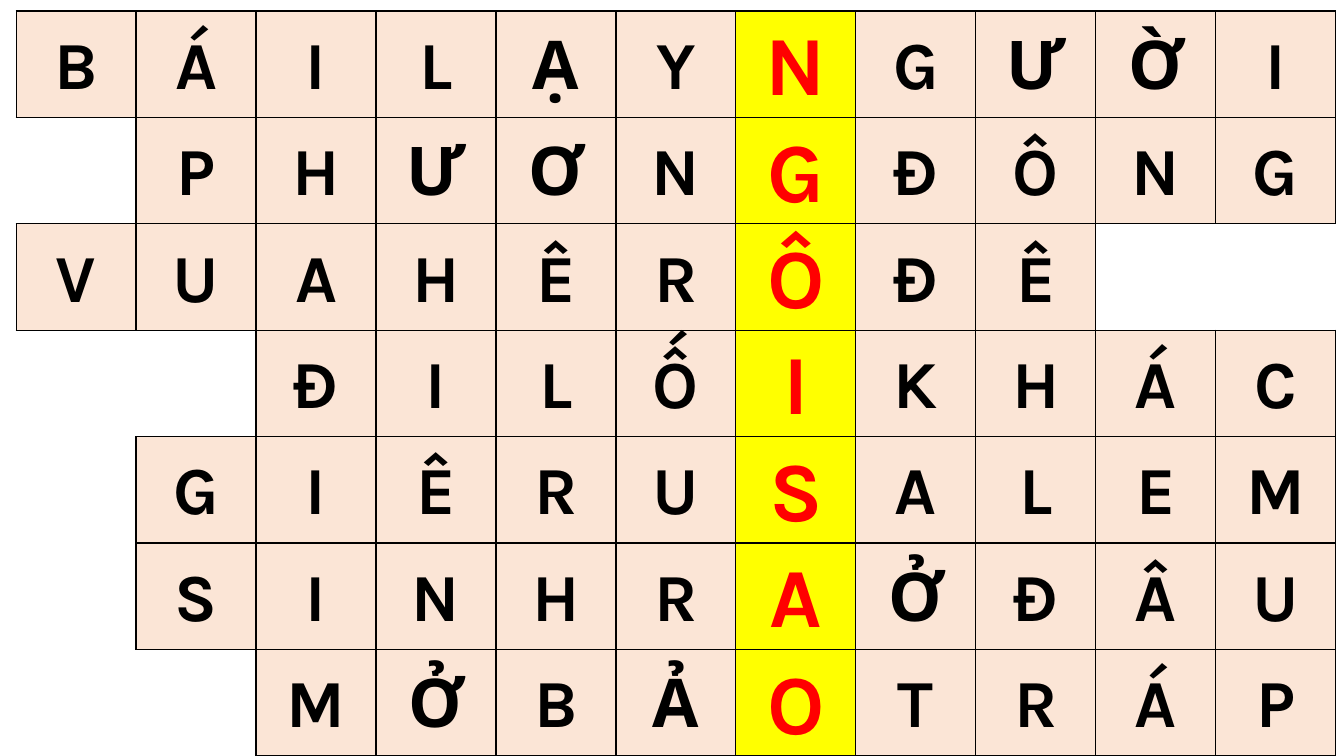
from dataclasses import dataclass

from lxml.etree import SubElement
from pptx import Presentation
from pptx.dml.color import RGBColor
from pptx.enum.text import MSO_ANCHOR, PP_ALIGN
from pptx.oxml.ns import qn
from pptx.util import Inches, Pt

BLANK = "."
KEY_COLUMN = 6
ANSWERS = [
    "BÁILẠYNGƯỜI",
    ".PHƯƠNGĐÔNG",
    "VUAHÊRÔĐÊ..",
    "..ĐILỐIKHÁC",
    ".GIÊRUSALEM",
    ".SINHRAỞĐÂU",
    "..MỞBẢOTRÁP",
]


@dataclass(frozen=True)
class Theme:
    font: str = "Karla"
    letter_size: int = 48
    key_size: int = 60
    ink: str = "000000"
    key_ink: str = "FF0000"
    letter_fill: str = "FBE5D6"
    key_fill: str = "FFFF00"
    blank_fill: str = "FFFFFF"
    border_width: int = 1


def write_text(text_frame, text, *, font, size, color, bold=True):
    paragraph = text_frame.paragraphs[0]
    paragraph.alignment = PP_ALIGN.CENTER
    paragraph.line_spacing = 1.07
    paragraph.space_after = Pt(8)
    run = paragraph.add_run()
    run.text = text
    run.font.name = font
    run.font.size = Pt(size)
    run.font.bold = bold
    run.font.color.rgb = RGBColor.from_string(color)


def has_letter(row, column):
    inside = 0 <= row < len(ANSWERS) and 0 <= column < len(ANSWERS[0])
    return inside and ANSWERS[row][column] != BLANK


class CrosswordSlide:
    def __init__(self, presentation, theme):
        self.theme = theme
        self.slide = presentation.slides.add_slide(presentation.slide_layouts[6])

    def add_crossword(self, left, top, width, height):
        row_count, column_count = len(ANSWERS), len(ANSWERS[0])
        table = self.slide.shapes.add_table(
            row_count, column_count,
            Inches(left), Inches(top), Inches(width), Inches(height),
        ).table
        table.first_row = table.horz_banding = False
        for table_row in table.rows:
            table_row.height = Inches(height / row_count)
        for table_column in table.columns:
            table_column.width = Inches(width / column_count)
        for row in range(row_count):
            for column in range(column_count):
                self.format_cell(table.cell(row, column), row, column)

    def format_cell(self, cell, row, column):
        theme = self.theme
        cell.margin_left = cell.margin_right = Inches(0.07)
        cell.margin_top = cell.margin_bottom = 0
        cell.vertical_anchor = MSO_ANCHOR.MIDDLE
        self.add_borders(cell, row, column)
        fill = theme.blank_fill
        if has_letter(row, column):
            is_key = column == KEY_COLUMN
            fill = theme.key_fill if is_key else theme.letter_fill
            write_text(
                cell.text_frame, ANSWERS[row][column], font=theme.font,
                size=theme.key_size if is_key else theme.letter_size,
                color=theme.key_ink if is_key else theme.ink,
            )
        cell.fill.solid()
        cell.fill.fore_color.rgb = RGBColor.from_string(fill)

    def add_borders(self, cell, row, column):
        """Draw each side that touches a letter, on either side of it."""
        neighbours = {
            "a:lnL": (row, column - 1),
            "a:lnR": (row, column + 1),
            "a:lnT": (row - 1, column),
            "a:lnB": (row + 1, column),
        }
        properties = cell._tc.get_or_add_tcPr()
        for tag, neighbour in neighbours.items():
            line = SubElement(properties, qn(tag), w=str(Pt(self.theme.border_width)))
            if has_letter(row, column) or has_letter(*neighbour):
                solid = SubElement(line, qn("a:solidFill"))
                SubElement(solid, qn("a:srgbClr"), val=self.theme.ink)
            else:
                SubElement(line, qn("a:noFill"))


def main():
    presentation = Presentation()
    presentation.slide_width = Inches(13.33)
    presentation.slide_height = Inches(7.5)
    crossword = CrosswordSlide(presentation, Theme())
    crossword.add_crossword(0.16, 0.11, 13.09, 7.39)
    presentation.save("out.pptx")


if __name__ == "__main__":
    main()
